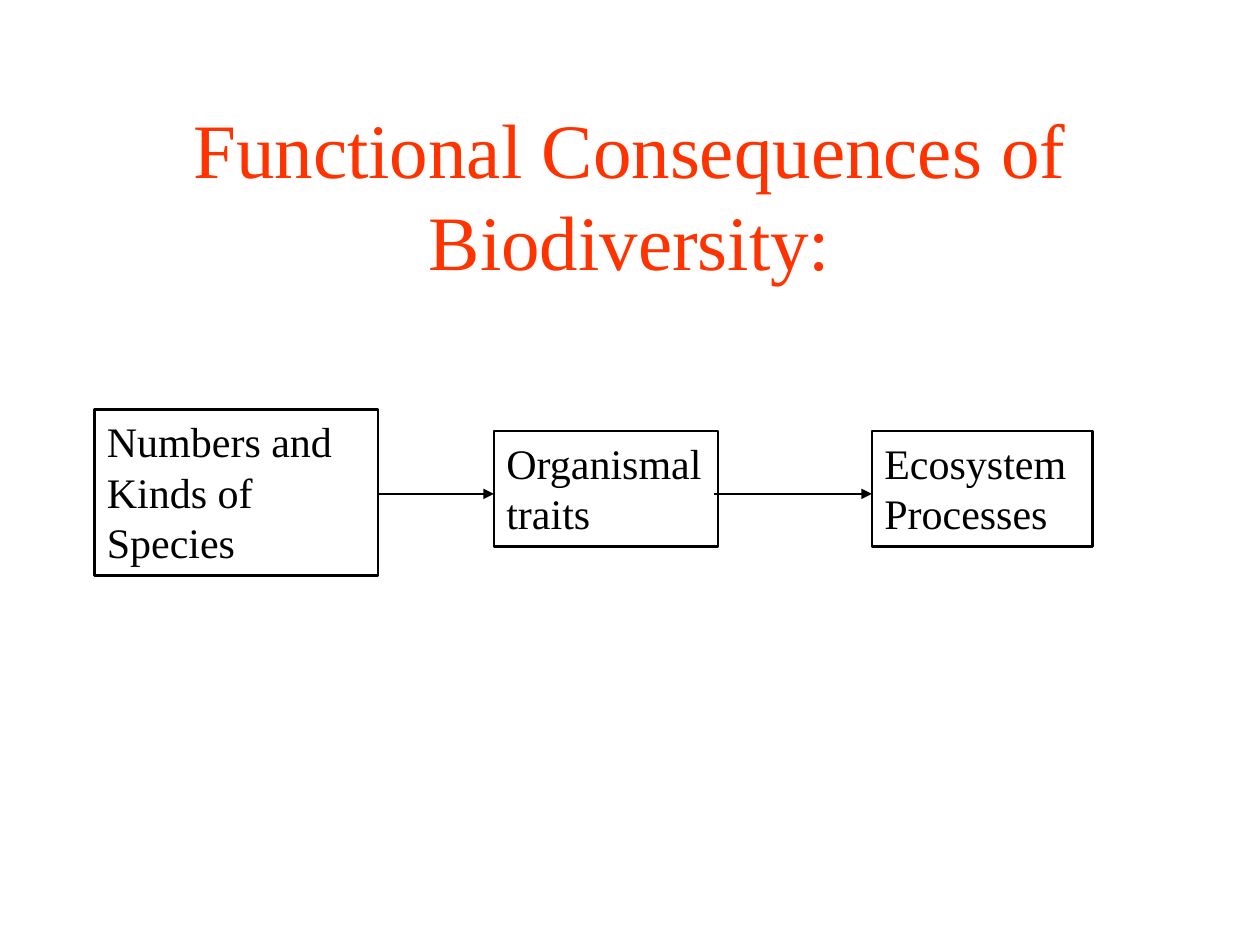
"""Build a slide linking biodiversity to ecosystem processes."""
from dataclasses import dataclass

from lxml.etree import SubElement
from pptx import Presentation
from pptx.dml.color import RGBColor
from pptx.enum.shapes import MSO_CONNECTOR, MSO_SHAPE
from pptx.enum.text import MSO_ANCHOR, MSO_AUTO_SIZE, PP_ALIGN
from pptx.oxml.ns import qn
from pptx.slide import Slide
from pptx.text.text import _Paragraph as Paragraph
from pptx.util import Inches, Pt

FONT = "Times New Roman"
BLACK = "000000"
TITLE_COLOR = "FF3300"
ARROW_Y = 3.92


@dataclass(frozen=True)
class Box:
    lines: tuple[str, ...]
    left: float
    top: float
    width: float
    height: float


@dataclass(frozen=True)
class Arrow:
    start: float
    end: float


BOXES = (
    Box(("Numbers and Kinds of Species",), 0.75, 3.25, 2.25, 1.32),
    Box(("Organismal", "traits"), 3.92, 3.42, 1.78, 0.92),
    Box(("Ecosystem", "Processes"), 6.92, 3.42, 1.75, 0.92),
)
ARROWS = (Arrow(3, 3.92), Arrow(5.67, 6.92))


def color(value: str) -> RGBColor:
    return RGBColor.from_string(value)


def format_paragraph(paragraph: Paragraph, size: float, value: str, alignment: PP_ALIGN) -> None:
    paragraph.alignment = alignment
    paragraph.font.name = FONT
    paragraph.font.size = Pt(size)
    paragraph.font.color.rgb = color(value)


def set_title(slide: Slide, text: str) -> None:
    title = slide.shapes.title
    title.left, title.top = Inches(0.75), Inches(0.75)
    title.width, title.height = Inches(8.5), Inches(1.58)
    frame = title.text_frame
    frame.text = text
    frame.vertical_anchor = MSO_ANCHOR.MIDDLE
    frame.auto_size = MSO_AUTO_SIZE.NONE
    format_paragraph(frame.paragraphs[0], 44, TITLE_COLOR, PP_ALIGN.CENTER)


def draw_box(slide: Slide, box: Box) -> None:
    shape = slide.shapes.add_shape(
        MSO_SHAPE.RECTANGLE,
        Inches(box.left), Inches(box.top), Inches(box.width), Inches(box.height),
    )
    shape.shadow.inherit = False
    shape.fill.background()
    shape.line.color.rgb = color(BLACK)
    shape.line.width = Pt(1.5)
    frame = shape.text_frame
    frame.text = "\n".join(box.lines)
    frame.word_wrap = True
    frame.auto_size = MSO_AUTO_SIZE.SHAPE_TO_FIT_TEXT
    frame.vertical_anchor = MSO_ANCHOR.TOP
    for paragraph in frame.paragraphs:
        format_paragraph(paragraph, 24, BLACK, PP_ALIGN.LEFT)


def draw_arrow(slide: Slide, arrow: Arrow) -> None:
    connector = slide.shapes.add_connector(
        MSO_CONNECTOR.STRAIGHT,
        Inches(arrow.start), Inches(ARROW_Y), Inches(arrow.end), Inches(ARROW_Y),
    )
    connector.line.color.rgb = color(BLACK)
    connector.line.width = Pt(0.75)
    properties = connector._element.spPr
    SubElement(properties.find(qn("a:ln")), qn("a:tailEnd"), type="triangle")
    SubElement(properties, qn("a:effectLst"))


def main() -> None:
    presentation = Presentation()
    presentation.slide_width, presentation.slide_height = Inches(10), Inches(7.5)
    slide = presentation.slides.add_slide(presentation.slide_layouts.get_by_name("Title Only"))
    set_title(slide, "Functional Consequences of Biodiversity:")
    for box in BOXES:
        draw_box(slide, box)
    for arrow in ARROWS:
        draw_arrow(slide, arrow)
    presentation.save("out.pptx")


if __name__ == "__main__":
    main()
